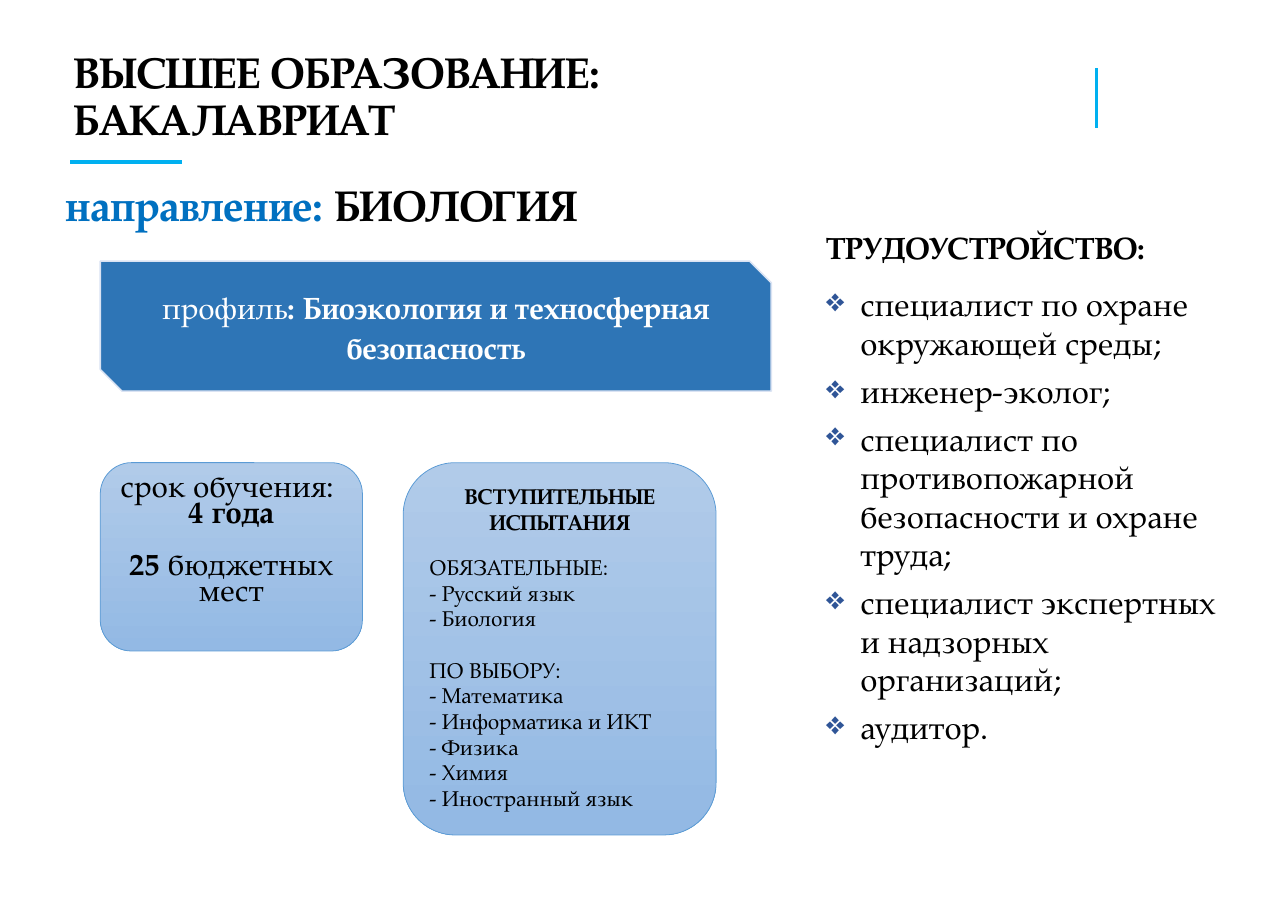
from lxml.etree import SubElement
from pptx import Presentation
from pptx.dml.color import RGBColor
from pptx.enum.shapes import MSO_CONNECTOR, MSO_SHAPE
from pptx.enum.text import MSO_ANCHOR, PP_ALIGN
from pptx.oxml.ns import qn
from pptx.util import Inches, Pt

FONT = "TeX Gyre Pagella"
BLACK, WHITE, BLUE = "000000", "FFFFFF", "0070C0"
ACCENT, BULLET = "00B0F0", "2F5597"
LEFT, CENTER = PP_ALIGN.LEFT, PP_ALIGN.CENTER
TOP, MIDDLE = MSO_ANCHOR.TOP, MSO_ANCHOR.MIDDLE

HEADING = ["ВЫСШЕЕ ОБРАЗОВАНИЕ:", "БАКАЛАВРИАТ"]
DIRECTION = [("направление: ", True, BLUE), ("БИОЛОГИЯ", True, BLACK)]
PROFILE = [("профиль", False, WHITE),
           (": Биоэкология и техносферная безопасность", True, WHITE)]
TERM = [[("срок обучения: ", False, BLACK)], [("4 года", True, BLACK)]]
PLACES = [("25 ", True, BLACK), ("бюджетных мест", False, BLACK)]
EXAMS_TITLE = "ВСТУПИТЕЛЬНЫЕ ИСПЫТАНИЯ"
EXAMS = [
    ("ОБЯЗАТЕЛЬНЫЕ:", 12.5, ["Русский язык", "Биология"]),
    ("ПО ВЫБОРУ:", 16.7, ["Математика", "Информатика и ИКТ", "Физика", "Химия",
                          "Иностранный язык"]),
]
JOBS_TITLE = "ТРУДОУСТРОЙСТВО:"
JOBS = ["специалист по охране окружающей среды;", "инженер-эколог;",
        "специалист по противопожарной безопасности и охране труда;",
        "специалист экспертных и надзорных организаций;", "аудитор."]
RULES = [((0.64, 1.47), (1.65, 1.47), 3), ((9.95, 0.62), (9.95, 1.16), 2.25)]


def color(value):
    return RGBColor.from_string(value)


def inches(values):
    return [Inches(value) for value in values]


def add_paragraph(text_frame, runs, size, align=LEFT, spacing=None, before=0, after=0):
    paragraph = text_frame.paragraphs[0]
    if paragraph.runs:
        paragraph = text_frame.add_paragraph()
    paragraph.alignment = align
    paragraph.line_spacing = spacing
    paragraph.space_before, paragraph.space_after = Pt(before), Pt(after)
    for text, bold, ink in runs:
        run = paragraph.add_run()
        run.text = text
        run.font.name, run.font.size, run.font.bold = FONT, Pt(size), bold
        run.font.color.rgb = color(ink)
    return paragraph


def add_bullet(paragraph):
    properties = paragraph._p.get_or_add_pPr()
    properties.set("marL", str(Inches(0.31)))
    properties.set("indent", str(-Inches(0.31)))
    bullet_color = SubElement(properties, qn("a:buClr"))
    SubElement(bullet_color, qn("a:srgbClr"), val=BULLET)
    SubElement(properties, qn("a:buChar"), char="❖")


def add_text(slide, box, anchor):
    text_frame = slide.shapes.add_textbox(*inches(box)).text_frame
    text_frame.word_wrap = True
    text_frame.vertical_anchor = anchor
    return text_frame


def add_panel(slide, kind, box, fills, line, width, anchor=TOP):
    shape = slide.shapes.add_shape(kind, *inches(box))
    shape.shadow.inherit = False
    if len(fills) == 1:
        shape.fill.solid()
        shape.fill.fore_color.rgb = color(fills[0])
    else:
        shape.fill.gradient()
        shape.fill.gradient_angle = 270
        for stop, shade in zip(shape.fill.gradient_stops, fills):
            stop.color.rgb = color(shade)
    shape.line.color.rgb = color(line)
    shape.line.width = Pt(width)
    shape.text_frame.word_wrap = True
    shape.text_frame.vertical_anchor = anchor
    return shape.text_frame


def add_rule(slide, start, end, width):
    rule = slide.shapes.add_connector(MSO_CONNECTOR.STRAIGHT, *inches(start + end))
    rule.line.color.rgb = color(ACCENT)
    rule.line.width = Pt(width)
    SubElement(rule._element.spPr, qn("a:effectLst"))


def main():
    """Build the slide about the bachelor's programme in biology."""
    presentation = Presentation()
    presentation.slide_width, presentation.slide_height = inches((11.69, 8.27))
    slide = presentation.slides.add_slide(presentation.slide_layouts[6])

    for start, end, width in RULES:
        add_rule(slide, start, end, width)

    heading = add_text(slide, (0.57, 0.45, 8.79, 0.88), MIDDLE)
    for line in HEADING:
        add_paragraph(heading, [(line, True, BLACK)], 28, spacing=0.9)

    direction = add_text(slide, (0.5, 1.58, 6.55, 0.56), MIDDLE)
    add_paragraph(direction, DIRECTION, 28)

    profile = add_panel(slide, MSO_SHAPE.SNIP_2_DIAG_RECTANGLE, (0.91, 2.37, 6.09, 1.18),
                        ["2E75B6"], "DAE3F3", 1, MIDDLE)
    add_paragraph(profile, PROFILE, 20, CENTER, 1.07)

    rounded = MSO_SHAPE.ROUNDED_RECTANGLE
    shades = ["B1CBE9", "93B9E4"]
    term = add_panel(slide, rounded, (0.91, 4.2, 2.38, 1.71), shades, "5B9BD5", 0.5)
    for runs in TERM:
        add_paragraph(term, runs, 20, CENTER, 0.7)
    add_paragraph(term, PLACES, 20, CENTER, 0.7, before=17)

    exams = add_panel(slide, rounded, (3.66, 4.2, 2.84, 3.38), shades, "5B9BD5", 0.5)
    add_paragraph(exams, [(EXAMS_TITLE, True, BLACK)], 14, CENTER)
    for group, gap, subjects in EXAMS:
        add_paragraph(exams, [(group, False, BLACK)], 14, before=gap)
        for subject in subjects:
            add_paragraph(exams, [(f"- {subject}", False, BLACK)], 14)

    jobs = add_text(slide, (7.4, 2.03, 3.83, 5.26), TOP)
    add_paragraph(jobs, [(JOBS_TITLE, True, BLACK)], 20, after=12.5)
    for job in JOBS:
        add_bullet(add_paragraph(jobs, [(job, False, BLACK)], 21, after=6))

    presentation.save("out.pptx")


if __name__ == "__main__":
    main()
